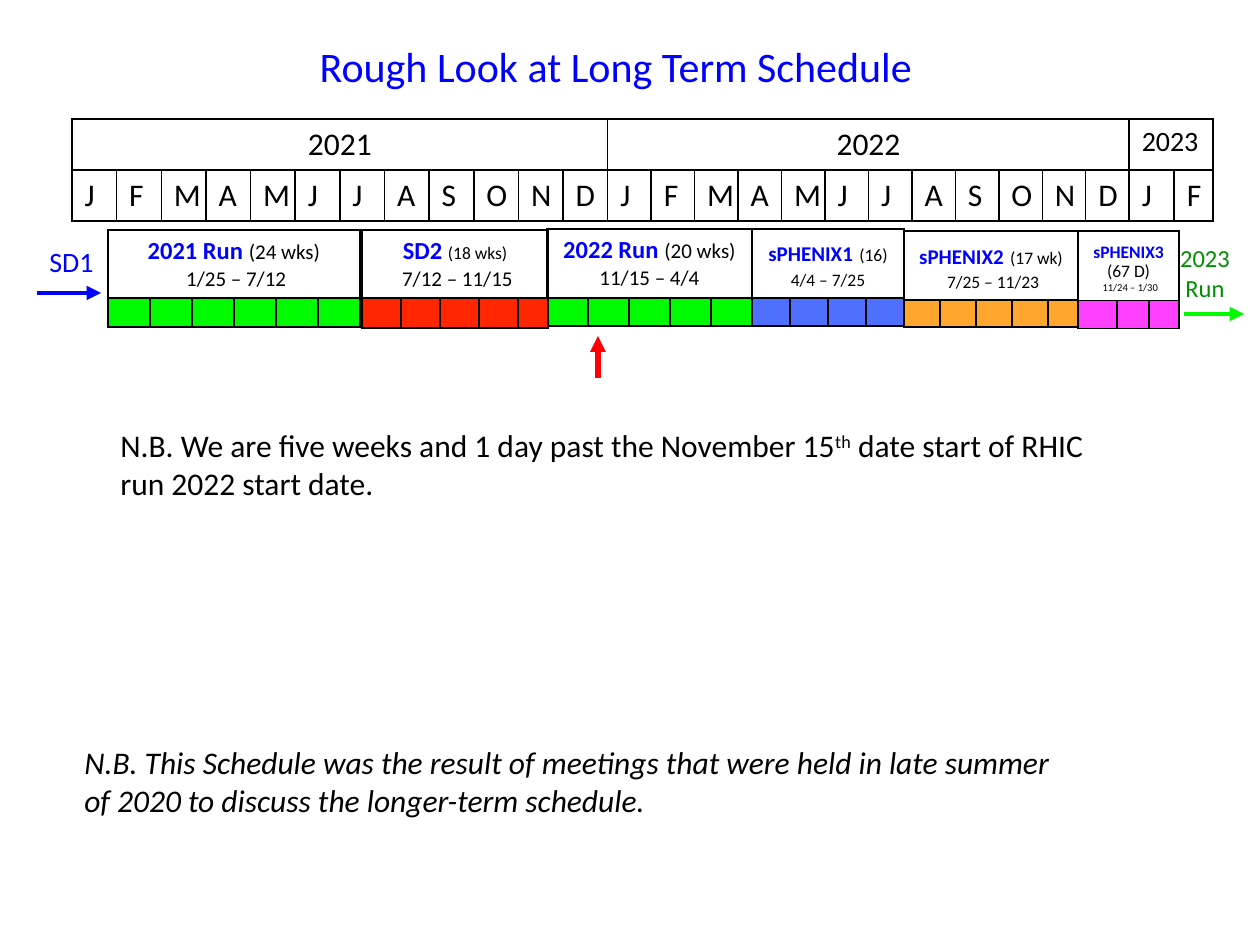
from itertools import accumulate

from lxml import etree
from pptx import Presentation
from pptx import util as u
from pptx.dml.color import RGBColor
from pptx.enum import shapes, text
from pptx.oxml.ns import qn

PX = 914400 / 126

THEME = {
    "font": "Calibri",
    "black": "000000", "blue": "0000FF", "dark green": "008F00",
    "green": "00FA00", "red": "FF2600", "indigo": "0432FF",
    "orange": "FF9300", "magenta": "FF40FF", "pointer": "FF0000",
    "title": {"size": 24, "color": "blue"},
    "year": {"size": 18},
    "short year": {"size": 16},
    "note": {"size": 18},
    "italic note": {"size": 18, "italic": True},
    "label": {"size": 16, "color": "blue"},
    "next run": {"size": 14, "color": "dark green"},
    "run name": {"size": 14, "color": "blue", "bold": True},
    "medium name": {"size": 12, "color": "blue", "bold": True},
    "small name": {"size": 10, "color": "blue", "bold": True},
    "gap": {"size": 16, "color": "blue", "bold": True},
    "dates": {"size": 12},
    "small dates": {"size": 10},
    "tiny gap": {"size": 8},
    "tiny dates": {"size": 6},
    "empty": {"size": 6},
}

TITLE = [[("Rough Look at Long Term Schedule", "title")]]

# year, style, month letters, month widths
YEARS = [
    ("2021", "year", "JFMAMJJASOND", [536 / 12] * 12),
    ("2022", "year", "JFMAMJJASOND", [522 / 12] * 12),
    ("2023", "short year", "JF", [45, 39]),
]

RUNS = [
    {"at": (108, 230), "columns": [42] * 6, "rows": [67, 29], "fill": "green",
     "text": [[("2021 Run ", "run name"), ("(24 wks)", "dates")],
              [(" 1/25 – 7/12", "dates")]]},
    {"at": (547, 229), "columns": [41] * 5, "rows": [69, 28], "fill": "green",
     "text": [[("2022 Run ", "run name"), ("(20 wks) 11/15 – 4/4", "dates")]]},
    {"at": (362, 230), "columns": [39] * 4 + [29], "rows": [67, 30], "fill": "red",
     "text": [[("SD2 ", "run name"), ("(18 wks)", "small dates")],
              [(" 7/12 – 11/15", "dates")]]},
    {"at": (752, 229), "columns": [38] * 4, "rows": [69, 28], "fill": "indigo", "alpha": 70,
     "text": [[("sPHENIX1", "medium name"), (" ", "gap"),
               ("(16) 4/4 – 7/25", "small dates")]]},
    {"at": (904, 231), "columns": [36] * 4 + [30], "rows": [69, 27], "fill": "orange", "alpha": 82,
     "text": [[("sPHENIX2", "medium name"), (" ", "gap"), ("(17 wk)", "small dates")],
              [(" 7/25 – 11/23", "small dates")]]},
    {"at": (1078, 231), "columns": [39, 32, 29], "rows": [67, 28], "fill": "magenta",
     "spacing": 0.78,
     "text": [[("sPHENIX3", "small name"), (" ", "gap"), ("(67 D)", "small dates")],
              [(" ", "tiny gap"), ("11/24 – 1/30", "tiny dates")]]},
]

# box, paragraphs, paragraph format, wrap
TEXTS = [
    ((37, 238, 71, 47), [[("SD1", "label")]], {}, False),
    ((1159, 237, 92, 72), [[("2023", "next run")], [("Run", "next run")]],
     {"alignment": text.PP_ALIGN.CENTER}, True),
    ((72, 737, 1023, 89),
     [[("N.B. This Schedule was the result of meetings that were held in late summer "
        "of 2020 to discuss the longer-term schedule.", "italic note")]], {}, True),
    ((108, 420, 1019, 89),
     [[("N.B. We are five weeks and 1 day past the November 15", "note"),
       ("th", "note", 30000),
       (" date start of RHIC run 2022 start date.", "note")]], {}, True),
]

# start, end, colour, width in points
ARROWS = [
    ((37, 293), (101, 293), "blue", 2.75),
    ((1184, 314), (1244, 314), "green", 2.75),
    ((598, 378), (598, 336), "pointer", 3),
]


def emu(*lengths):
    return [u.Emu(round(length * PX)) for length in lengths]


def rgb(name):
    return RGBColor.from_string(THEME[name])


def write(frame, paragraphs, paragraph_format):
    for index, runs in enumerate(paragraphs):
        paragraph = frame.add_paragraph() if index else frame.paragraphs[0]
        for name, value in paragraph_format.items():
            setattr(paragraph, name, value)
        for words, style, *baseline in runs:
            run = paragraph.add_run()
            run.text = words
            values = {"bold": False, "italic": False, **THEME[style]}
            run.font.color.rgb = rgb(values.pop("color", "black"))
            values.update(name=THEME["font"], size=u.Pt(values["size"]))
            for name, value in values.items():
                setattr(run.font, name, value)
            if baseline:
                run.font._element.set("baseline", str(baseline[0]))


def add_grid(slide, at, columns, rows):
    """Add a table with thin black borders and no fill."""
    box = emu(*at, sum(columns), sum(rows))
    table = slide.shapes.add_table(len(rows), len(columns), *box).table
    table.first_row = table.horz_banding = False
    for lines, sizes in ((table.columns, columns), (table.rows, rows)):
        name = "width" if sizes is columns else "height"
        for line, size in zip(lines, sizes):
            setattr(line, name, emu(size)[0])
    for cell in table.iter_cells():
        properties = cell._tc.get_or_add_tcPr()
        for side in ("a:lnL", "a:lnR", "a:lnT", "a:lnB"):
            border = etree.SubElement(properties, qn(side), w=str(u.Pt(1)))
            fill = etree.SubElement(border, qn("a:solidFill"))
            etree.SubElement(fill, qn("a:srgbClr"), val=THEME["black"])
        cell.fill.background()
    return table


def shrink_empty(cell):
    """Keep an empty cell from stretching its row."""
    size = str(THEME["empty"]["size"] * 100)
    etree.SubElement(cell.text_frame.paragraphs[0]._p, qn("a:endParaRPr"), sz=size)


def add_calendar(slide):
    widths = [width for *_, months in YEARS for width in months]
    table = add_grid(slide, (72, 119), widths, [51, 51])
    starts = accumulate((len(letters) for _, _, letters, _ in YEARS), initial=0)
    for start, (year, style, letters, _) in zip(starts, YEARS):
        table.cell(0, start).merge(table.cell(0, start + len(letters) - 1))
        centred = {"alignment": text.PP_ALIGN.CENTER} if style == "year" else {}
        write(table.cell(0, start).text_frame, [[(year, style)]], centred)
        for column, letter in enumerate(letters, start):
            write(table.cell(1, column).text_frame, [[(letter, "year")]], {})


def add_run_block(slide, block):
    columns = block["columns"]
    table = add_grid(slide, block["at"], columns, block["rows"])
    table.cell(0, 0).merge(table.cell(0, len(columns) - 1))
    values = {"alignment": text.PP_ALIGN.CENTER}
    if "spacing" in block:
        values["line_spacing"] = block["spacing"]
    write(table.cell(0, 0).text_frame, block["text"], values)
    for column in range(len(columns)):
        cell = table.cell(1, column)
        shrink_empty(cell)
        cell.fill.solid()
        cell.fill.fore_color.rgb = rgb(block["fill"])
        if "alpha" in block:
            color = cell._tc.tcPr.find(qn("a:solidFill")).find(qn("a:srgbClr"))
            etree.SubElement(color, qn("a:alpha"), val=str(block["alpha"] * 1000))


def add_arrow(slide, start, end, color, width):
    arrow = slide.shapes.add_connector(shapes.MSO_CONNECTOR.STRAIGHT, *emu(*start, *end))
    arrow.line.color.rgb = rgb(color)
    arrow.line.width = u.Pt(width)
    etree.SubElement(arrow.line._get_or_add_ln(), qn("a:tailEnd"), type="triangle")
    etree.SubElement(arrow._element.spPr, qn("a:effectLst"))


def main():
    presentation = Presentation()
    presentation.slide_width, presentation.slide_height = emu(1260, 945)
    slide = presentation.slides.add_slide(presentation.slide_layouts[5])

    title = slide.shapes.title
    title.left, title.top, title.width, title.height = emu(307, 34, 646, 63)
    frame = title.text_frame
    frame.vertical_anchor = text.MSO_ANCHOR.TOP
    frame.auto_size = text.MSO_AUTO_SIZE.NONE
    write(frame, TITLE, {"alignment": text.PP_ALIGN.LEFT})

    add_calendar(slide)
    for block in RUNS:
        add_run_block(slide, block)
    for arrow in ARROWS:
        add_arrow(slide, *arrow)
    for box, paragraphs, paragraph_format, wrap in TEXTS:
        frame = slide.shapes.add_textbox(*emu(*box)).text_frame
        frame.word_wrap = wrap
        write(frame, paragraphs, paragraph_format)

    presentation.save("out.pptx")


if __name__ == "__main__":
    main()
